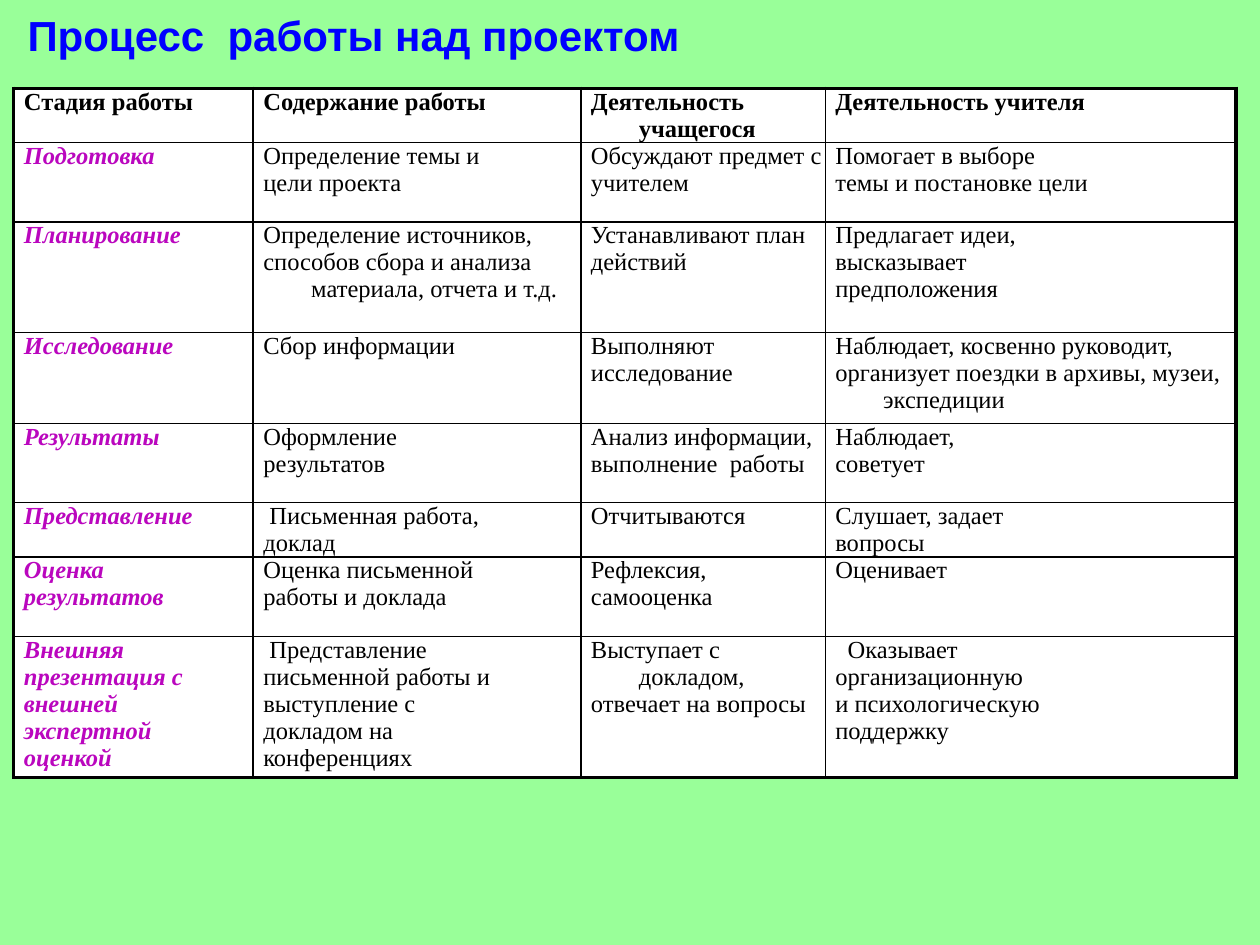
"""Builds a slide with a table of the stages of project work."""
from lxml import etree
from pptx import Presentation
from pptx.dml.color import RGBColor
from pptx.enum.text import MSO_AUTO_SIZE
from pptx.oxml.ns import qn
from pptx.util import Inches, Pt

FIT_SHAPE = MSO_AUTO_SIZE.SHAPE_TO_FIT_TEXT
MINT = RGBColor(0x99, 0xFF, 0x99)
WHITE = RGBColor(0xFF, 0xFF, 0xFF)
BLACK = RGBColor(0, 0, 0)
BLUE = RGBColor(0, 0, 0xFF)
PURPLE = RGBColor(0xBA, 0x06, 0xBE)

COLUMN_WIDTHS = [1.9, 2.6, 1.94, 3.26]
ROW_HEIGHTS = [0.39, 0.63, 0.88, 0.72, 0.63, 0.39, 0.63, 1.12]
HANGING_INDENT = Inches(0.38)
STAGES = [
    ["Стадия работы", "Содержание работы", "Деятельность учащегося",
     "Деятельность учителя"],
    ["Подготовка", "Определение темы и\nцели проекта",
     "Обсуждают предмет с\nучителем", "Помогает в выборе\nтемы и постановке цели"],
    ["Планирование",
     "Определение источников,\nспособов сбора и анализа материала, отчета и т.д.",
     "Устанавливают план\nдействий", "Предлагает идеи,\nвысказывает\nпредположения"],
    ["Исследование", "Сбор информации", "Выполняют\nисследование",
     "Наблюдает, косвенно руководит,\n"
     "организует поездки в архивы, музеи, экспедиции"],
    ["Результаты", "Оформление\nрезультатов",
     "Анализ информации,\nвыполнение  работы", "Наблюдает,\nсоветует"],
    ["Представление", " Письменная работа,\nдоклад", "Отчитываются",
     "Слушает, задает\nвопросы"],
    ["Оценка\nрезультатов", "Оценка письменной\nработы и доклада",
     "Рефлексия,\nсамооценка", "Оценивает"],
    ["Внешняя\nпрезентация с\nвнешней\nэкспертной\nоценкой",
     " Представление\nписьменной работы и\nвыступление с\nдокладом на\nконференциях",
     "Выступает с докладом,\nотвечает на вопросы",
     "  Оказывает\nорганизационную\nи психологическую\nподдержку"],
]


def format_font(font, name, size, color, bold=False, italic=False):
    """Set the look of a run."""
    font.name, font.size = name, Pt(size)
    font.bold, font.italic = bold, italic
    font.color.rgb = color


def add_title(page, text):
    """Add the heading above the table."""
    box = page.shapes.add_textbox(Inches(0.12), Inches(0.03), Inches(5.51), Inches(0.5))
    frame = box.text_frame
    frame.word_wrap = True
    frame.auto_size = FIT_SHAPE
    frame.text = text
    format_font(frame.paragraphs[0].runs[0].font, "Arial", 24, BLUE, bold=True)


def set_borders(cell, widths):
    """Draw the four cell edges, given in points by side letter."""
    properties = cell._tc.get_or_add_tcPr()
    for position, (side, width) in enumerate(widths.items()):
        line = etree.Element(qn(f"a:ln{side}"), w=str(Pt(width)))
        fill = etree.SubElement(line, qn("a:solidFill"))
        etree.SubElement(fill, qn("a:srgbClr"), val=str(BLACK))
        properties.insert(position, line)


def fill_cell(cell, text, color, bold, italic):
    """Write text with a hanging indent on a white cell."""
    cell.margin_left = Inches(0.08)
    cell.margin_right = cell.margin_top = cell.margin_bottom = 0
    cell.fill.solid()
    cell.fill.fore_color.rgb = WHITE
    cell.text_frame.text = text
    for para in cell.text_frame.paragraphs:
        properties = para._p.get_or_add_pPr()
        properties.set("marL", str(HANGING_INDENT))
        properties.set("indent", str(-HANGING_INDENT))
        for span in para.runs:
            format_font(span.font, "Times New Roman", 14, color, bold, italic)


def add_stage_table(page):
    """Add the table with a thick outer frame and thin inner lines."""
    row_count, column_count = len(STAGES), len(COLUMN_WIDTHS)
    table = page.shapes.add_table(
        row_count, column_count, Inches(0.11), Inches(0.7),
        Inches(sum(COLUMN_WIDTHS)), Inches(sum(ROW_HEIGHTS))).table
    table.horz_banding = False
    table.first_row = False
    for column, width in zip(table.columns, COLUMN_WIDTHS):
        column.width = Inches(width)
    for row, height in zip(table.rows, ROW_HEIGHTS):
        row.height = Inches(height)
    for r, texts in enumerate(STAGES):
        for c, text in enumerate(texts):
            header, stage = r == 0, r > 0 and c == 0
            cell = table.cell(r, c)
            fill_cell(cell, text, PURPLE if stage else BLACK, header or stage, stage)
            set_borders(cell, {
                "L": 2 if c == 0 else 1,
                "R": 2 if c == column_count - 1 else 1,
                "T": 2 if header else 1,
                "B": 2 if r == row_count - 1 else 1,
            })


def main():
    """Build and save the slide."""
    deck = Presentation()
    deck.slide_width, deck.slide_height = Inches(10), Inches(7.5)
    page = deck.slides.add_slide(deck.slide_layouts[6])
    page.background.fill.solid()
    page.background.fill.fore_color.rgb = MINT
    add_stage_table(page)
    add_title(page, "Процесс  работы над проектом")
    deck.save("out.pptx")


if __name__ == "__main__":
    main()
